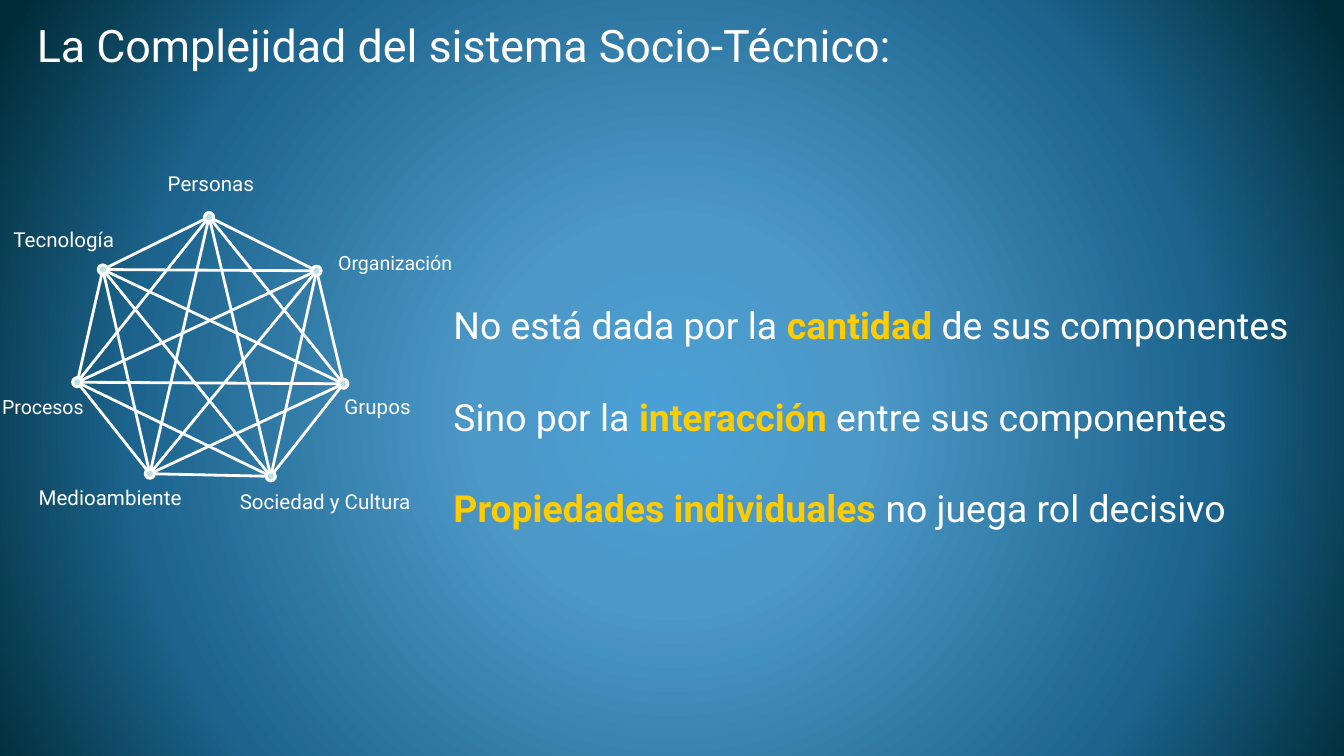
"""Build the slide on the complexity of the socio-technical system."""
from itertools import combinations

from pptx import Presentation
from pptx.dml.color import RGBColor
from pptx.enum.shapes import MSO_CONNECTOR, MSO_SHAPE
from pptx.enum.text import MSO_ANCHOR, MSO_AUTO_SIZE, PP_ALIGN
from pptx.oxml import parse_xml
from pptx.oxml.ns import nsdecls
from pptx.oxml.xmlchemy import OxmlElement
from pptx.util import Pt

TITLE = "La Complejidad del sistema Socio-Técnico:"
POINTS = [
    [("No está dada por la ", False), ("cantidad", True), (" de sus componentes", False)],
    [("Sino por la ", False), ("interacción", True), (" entre sus componentes", False)],
    [("Propiedades individuales ", True), ("no juega rol decisivo", False)],
]
# name, type size, node centre, label left, top and width
NODES = [
    ("Tecnología", 11, (55.1, 144.4), (-0.7, 118.1, 69.8)),
    ("Personas", 11, (112, 116.3), (79.9, 87.8, 66.2)),
    ("Organización", 10.5, (169.6, 145.1), (171.4, 131, 80.6)),
    ("Grupos", 11, (184, 205.6), (169.2, 207.4, 66.2)),
    ("Sociedad y Cultura", 11, (145.1, 255.2), (119.5, 258.5, 109.4)),
    ("Medioambiente", 11, (80.3, 253.8), (4.3, 256.3, 109.4)),
    ("Procesos", 10.5, (41.4, 204.8), (-10.1, 208.1, 66.2)),
]
THEME = {
    "font": "Roboto",
    "text": RGBColor.from_string("FFFFFF"),
    "accent": RGBColor.from_string("FFCC00"),
    "dot": RGBColor.from_string("BBE0E3"),
    "title": 24,
    "body": 20,
    "line": 1.5,
    "stops": [(0, "4AA0D6"), (25, "4C98C7"), (70, "1C648D"), (100, "002C38")],
}
DOT = 5


def paint(slide):
    """Give the slide its radial background."""
    slide.background.fill.solid()
    stops = "".join(
        f'<a:gs pos="{pos * 1000}"><a:srgbClr val="{tone}"/></a:gs>'
        for pos, tone in THEME["stops"])
    grad = parse_xml(
        f'<a:gradFill {nsdecls("a")} rotWithShape="1"><a:gsLst>{stops}</a:gsLst>'
        '<a:path path="circle"><a:fillToRect l="10000" t="110000" r="10000" b="100000"/>'
        '</a:path></a:gradFill>')
    props = slide.element.cSld.bg.bgPr
    props.replace(props[0], grad)


def place(shape, left, top, width, height):
    """Move and size a shape."""
    shape.left, shape.top = Pt(left), Pt(top)
    shape.width, shape.height = Pt(width), Pt(height)


def style(para, size, align=PP_ALIGN.LEFT):
    """Set the type of a paragraph."""
    para.alignment = align
    font = para.font
    font.name, font.size = THEME["font"], Pt(size)
    font.color.rgb = THEME["text"]


def inset(frame, top=3):
    """Wrap the text and set narrow margins."""
    frame.word_wrap = True
    frame.margin_left = frame.margin_right = Pt(6)
    frame.margin_top, frame.margin_bottom = Pt(top), Pt(3)


def head(slide):
    """Format the title."""
    title = slide.shapes.title
    place(title, 13.7, 0.7, 652.3, 46.8)
    frame = title.text_frame
    frame.text = TITLE
    frame.auto_size = MSO_AUTO_SIZE.NONE
    frame.vertical_anchor = MSO_ANCHOR.MIDDLE
    inset(frame)
    style(frame.paragraphs[0], THEME["title"])


def body(slide):
    """Write the three points."""
    frame = slide.shapes.add_textbox(Pt(236.9), Pt(141.1), Pt(481), Pt(184.3)).text_frame
    inset(frame, 21)
    for i, parts in enumerate(POINTS):
        para = frame.add_paragraph() if i else frame.paragraphs[0]
        style(para, THEME["body"])
        if i:
            para.space_before = Pt(24.8)
        for text, strong in parts:
            run = para.add_run()
            run.text = text
            if strong:
                run.font.bold = True
                run.font.color.rgb = THEME["accent"]


def edge(shape):
    """Set the white outline."""
    shape.line.color.rgb = THEME["text"]
    shape.line.width = Pt(THEME["line"])


def web(slide):
    """Join every pair of nodes, then draw the nodes."""
    group = slide.shapes.add_group_shape()
    spots = [node[2] for node in NODES]
    for start, end in combinations(spots, 2):
        link = group.shapes.add_connector(
            MSO_CONNECTOR.STRAIGHT, *[Pt(v) for v in start + end])
        edge(link)
        link._element.spPr.append(OxmlElement("a:effectLst"))
    for x, y in spots:
        dot = group.shapes.add_shape(
            MSO_SHAPE.OVAL, Pt(x - DOT / 2), Pt(y - DOT / 2), Pt(DOT), Pt(DOT))
        dot.shadow.inherit = False
        dot.fill.solid()
        dot.fill.fore_color.rgb = THEME["dot"]
        edge(dot)


def label(slide):
    """Name the nodes."""
    for name, size, _, (left, top, width) in NODES:
        frame = slide.shapes.add_textbox(Pt(left), Pt(top), Pt(width), Pt(20.9)).text_frame
        frame.word_wrap = True
        frame.auto_size = MSO_AUTO_SIZE.SHAPE_TO_FIT_TEXT
        frame.text = name
        style(frame.paragraphs[0], size, PP_ALIGN.CENTER)


def main():
    """Build and save the deck."""
    deck = Presentation()
    deck.slide_width, deck.slide_height = Pt(720), Pt(405)
    slide = deck.slides.add_slide(deck.slide_layouts[5])
    for part in (paint, head, body, web, label):
        part(slide)
    deck.save("out.pptx")


if __name__ == "__main__":
    main()
